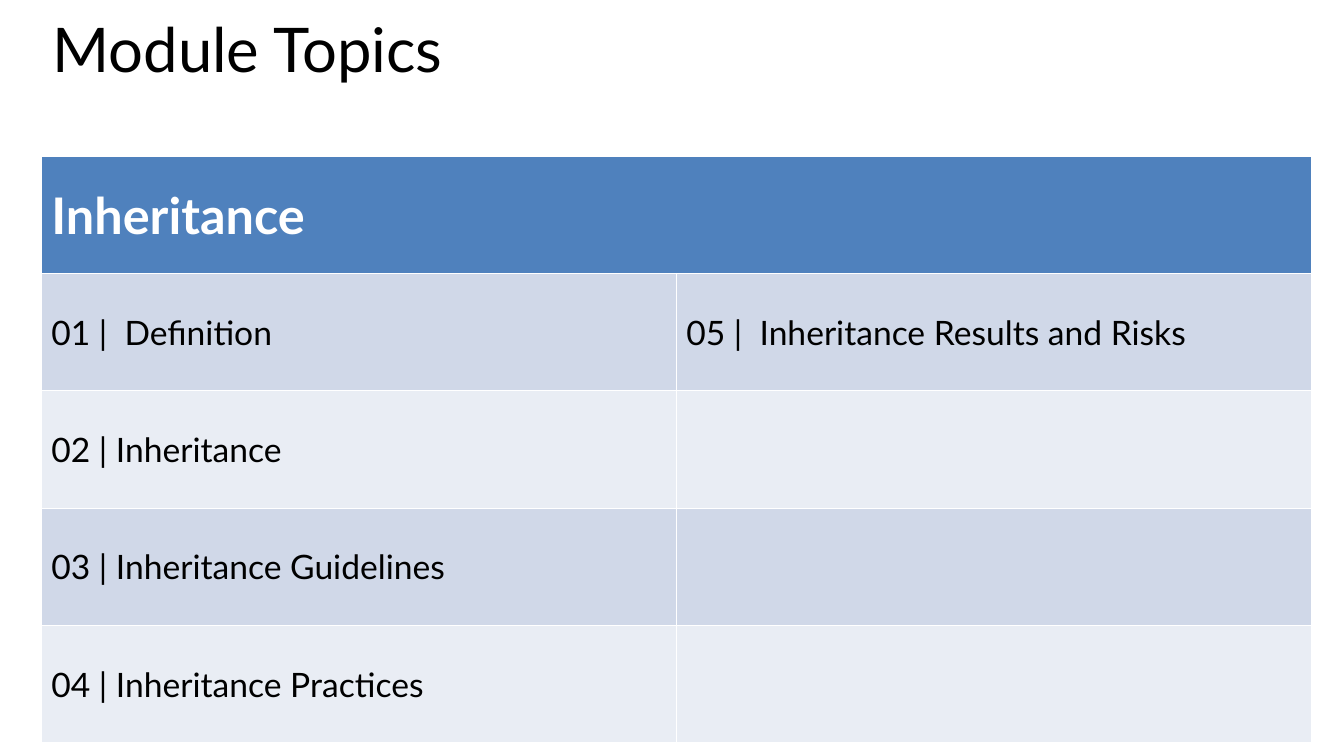
"""Build the Module Topics slide with its table of inheritance topics."""
from pptx import Presentation
from pptx.dml.color import RGBColor
from pptx.enum import text
from pptx.util import Pt

TITLE = "Module Topics"
HEADING = "Inheritance"
TOPICS = [
    ("01 |  Definition", "05 |  Inheritance Results and Risks"),
    ("02 | Inheritance", ""),
    ("03 | Inheritance Guidelines", ""),
    ("04 | Inheritance Practices", ""),
]
FONT = "Lato"
BLACK, WHITE, HEADER = "000000", "FFFFFF", "4F81BD"
BANDS = ("D0D8E8", "E9EDF4")
LEFT, TOP, COL_W, ROW_H = 29.5, 111.6, 453.6, 83.8


def color(value):
    return RGBColor.from_string(value)


def style(p, size, ink, bold=False):
    p.font.name = FONT
    p.font.size = Pt(size)
    p.font.bold = bold
    p.font.color.rgb = color(ink)


def fill_cell(cell, words, fill, size, ink, bold=False):
    cell.fill.solid()
    cell.fill.fore_color.rgb = color(fill)
    cell.vertical_anchor = text.MSO_ANCHOR.MIDDLE
    if words:
        cell.text = words
        style(cell.text_frame.paragraphs[0], size, ink, bold)


def add_title(s):
    title = s.shapes.title
    title.left, title.top = Pt(30.2), Pt(14.4)
    title.width, title.height = Pt(907.2), Pt(83.5)
    title.text = TITLE
    tf = title.text_frame
    tf.vertical_anchor = text.MSO_ANCHOR.TOP
    p = tf.paragraphs[0]
    p.alignment = text.PP_ALIGN.LEFT
    p.line_spacing = 0.8
    style(p, 44, BLACK)


def add_topics(s):
    rows = len(TOPICS) + 1
    table = s.shapes.add_table(rows, 2, Pt(LEFT), Pt(TOP),
                               Pt(2 * COL_W), Pt(rows * ROW_H)).table
    table.cell(0, 0).merge(table.cell(0, 1))
    fill_cell(table.cell(0, 0), HEADING, HEADER, 36, WHITE, True)
    for i, pair in enumerate(TOPICS):
        for j, topic in enumerate(pair):
            fill_cell(table.cell(i + 1, j), topic, BANDS[i % 2], 24, BLACK)


def main():
    prs = Presentation()
    prs.slide_width, prs.slide_height = Pt(960), Pt(540)
    s = prs.slides.add_slide(prs.slide_layouts[5])
    add_title(s)
    add_topics(s)
    prs.save("out.pptx")


if __name__ == "__main__":
    main()
